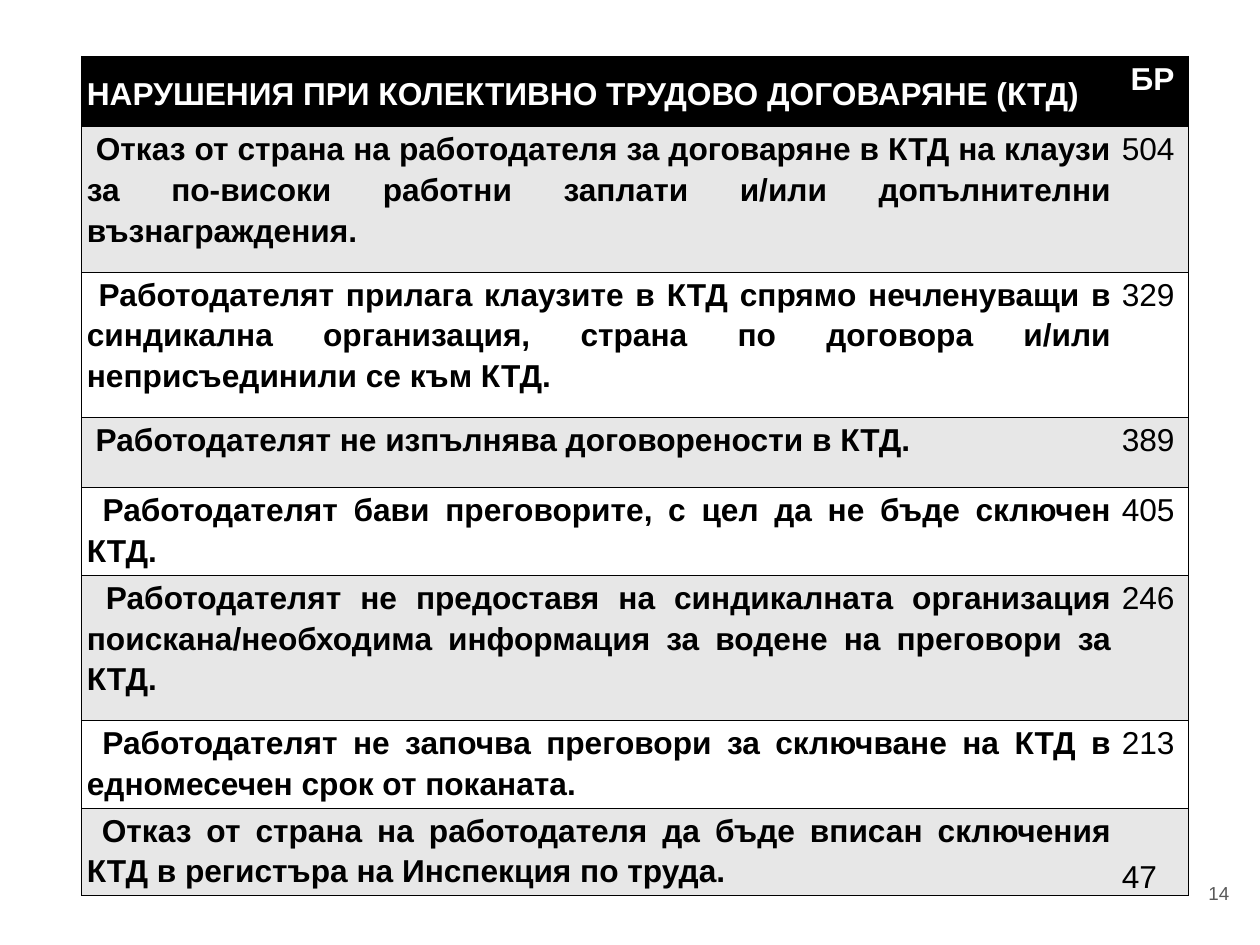
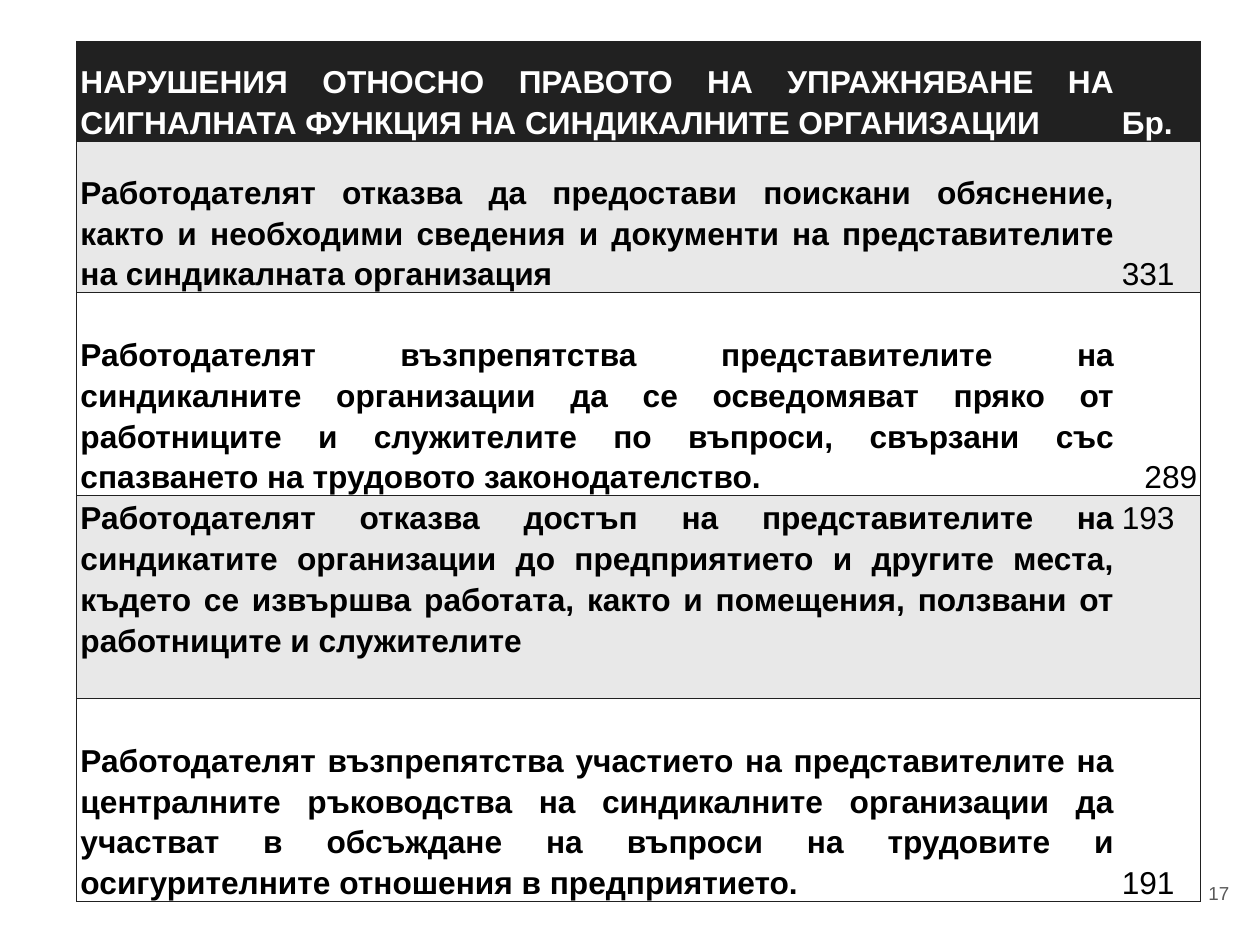
"""Build two slides of tables that count labour law violations."""
import lxml.etree
import pptx
import pptx.dml.color
import pptx.enum.text
import pptx.oxml.ns
import pptx.util

Inches = pptx.util.Inches
Pt = pptx.util.Pt
RGB = pptx.dml.color.RGBColor.from_string
qn = pptx.oxml.ns.qn
ALIGN = pptx.enum.text.PP_ALIGN
ANCHOR = pptx.enum.text.MSO_ANCHOR
TOP, MID, LOW = ANCHOR.TOP, ANCHOR.MIDDLE, ANCHOR.BOTTOM

HUES = {"black": "000000", "ink": "212121", "white": "FFFFFF",
        "mist": "E7E7E7", "pale": "E8E8E8", "grey": "595959"}


def style(para, size, hue, bold, align):
    para.alignment = align
    for run in para.runs:
        run.font.name = "Arial"
        run.font.size = Pt(size)
        run.font.bold = bold
        run.font.color.rgb = RGB(HUES[hue])


def edge(cell, hue, bare):
    props = cell._tc.get_or_add_tcPr()
    for spot, side in enumerate(("lnL", "lnR", "lnT", "lnB")):
        line = lxml.etree.Element(qn("a:" + side), w=str(Pt(1)))
        if side == bare:
            lxml.etree.SubElement(line, qn("a:noFill"))
        else:
            fill = lxml.etree.SubElement(line, qn("a:solidFill"))
            lxml.etree.SubElement(fill, qn("a:srgbClr"), val=HUES[hue])
        props.insert(spot, line)


pages = [
    {"num": "14", "left": 1.15, "top": 0.79, "cols": (14.53, 1.01),
     "dark": "black", "band": "mist", "inset": 0.07, "after": 0,
     "count": ALIGN.JUSTIFY, "rows": [
         ("НАРУШЕНИЯ ПРИ КОЛЕКТИВНО ТРУДОВО ДОГОВАРЯНЕ (КТД)", MID,
          " БР", TOP, 0.99),
         (" Отказ от страна на работодателя за договаряне в КТД на клаузи "
          "за по-високи работни заплати и/или допълнителни "
          "възнаграждения.", TOP, "504", TOP, 2.04),
         (" Работодателят прилага клаузите в КТД спрямо нечленуващи в "
          "синдикална организация, страна по договора и/или "
          "неприсъединили се към КТД.", TOP, "329", TOP, 2.04),
         (" Работодателят не изпълнява договорености в КТД.", TOP,
          "389", TOP, 0.99),
         (" Работодателят бави преговорите, с цел да не бъде сключен КТД.",
          TOP, "405", TOP, 1.23),
         (" Работодателят не предоставя на синдикалната организация "
          "поискана/необходима информация за водене на преговори за КТД.",
          TOP, "246", TOP, 2.04),
         (" Работодателят не започва преговори за сключване на КТД в "
          "едномесечен срок от поканата.", TOP, "213", TOP, 1.23),
         (" Отказ от страна на работодателя да бъде вписан сключения КТД в "
          "регистъра на Инспекция по труда.", TOP, "47", LOW, 1.23)]},
    {"num": "17", "left": 1.08, "top": 0.58, "cols": (14.62, 1.16),
     "dark": "ink", "band": "pale", "inset": 0.05, "after": 10,
     "count": ALIGN.LEFT, "rows": [
         ("НАРУШЕНИЯ ОТНОСНО ПРАВОТО НА УПРАЖНЯВАНЕ НА СИГНАЛНАТА ФУНКЦИЯ "
          "НА СИНДИКАЛНИТЕ ОРГАНИЗАЦИИ", LOW, "Бр.", LOW, 1.4),
         ("Работодателят отказва да предостави поискани обяснение, както и "
          "необходими сведения и документи на представителите на "
          "синдикалната организация", LOW, "331", LOW, 2.13),
         ("Работодателят възпрепятства представителите на синдикалните "
          "организации да се осведомяват пряко от работниците и служителите "
          "по въпроси, свързани със спазването на трудовото "
          "законодателство.", LOW, "289", LOW, 2.85),
         ("Работодателят отказва достъп на представителите на синдикатите "
          "организации до предприятието и другите места, където се извършва "
          "работата, както и помещения, ползвани от работниците и "
          "служителите", TOP, "193", TOP, 2.85),
         ("Работодателят възпрепятства участието на представителите на "
          "централните ръководства на синдикалните организации да участват "
          "в обсъждане на въпроси на трудовите и осигурителните отношения в "
          "предприятието.", LOW, "191", LOW, 2.85)]},
]

deck = pptx.Presentation()
deck.slide_width = Inches(17.69)
deck.slide_height = Inches(13.27)

for page in pages:
    slide = deck.slides.add_slide(deck.slide_layouts[6])

    box = slide.shapes.add_textbox(
        Inches(16.39), Inches(12.03), Inches(1.06), Inches(1.02))
    frame = box.text_frame
    frame.word_wrap = True
    frame.vertical_anchor = MID
    frame.margin_left = frame.margin_right = Inches(0.19)
    frame.margin_top = frame.margin_bottom = Inches(0.19)
    frame.text = page["num"]
    style(frame.paragraphs[0], 19, "grey", False, ALIGN.RIGHT)

    rows = page["rows"]
    grid = slide.shapes.add_table(
        len(rows), 2, Inches(page["left"]), Inches(page["top"]),
        Inches(sum(page["cols"])), Inches(sum(row[-1] for row in rows))).table
    grid.horz_banding = False
    for col, width in zip(grid.columns, page["cols"]):
        col.width = Inches(width)

    for r, (text, hold, count, rest, height) in enumerate(rows):
        grid.rows[r].height = Inches(height)
        fill = page["dark"] if r == 0 else page["band"] if r % 2 else "white"
        hue = "black" if r else "white"
        parts = ((text, hold, ALIGN.JUSTIFY, True, "lnR"),
                 (count, rest, page["count"], r == 0, "lnL"))
        for c, (words, anchor, align, bold, bare) in enumerate(parts):
            cell = grid.cell(r, c)
            cell.fill.solid()
            cell.fill.fore_color.rgb = RGB(HUES[fill])
            edge(cell, page["dark"], bare)
            cell.vertical_anchor = anchor
            cell.margin_left = cell.margin_right = Inches(page["inset"])
            cell.margin_top = cell.margin_bottom = 0
            cell.text_frame.text = words
            para = cell.text_frame.paragraphs[0]
            para.line_spacing = 1.15
            para.space_after = Pt(page["after"])
            if words == "289":
                align = ALIGN.RIGHT
            style(para, 32, hue, bold, align)

deck.save("out.pptx")
